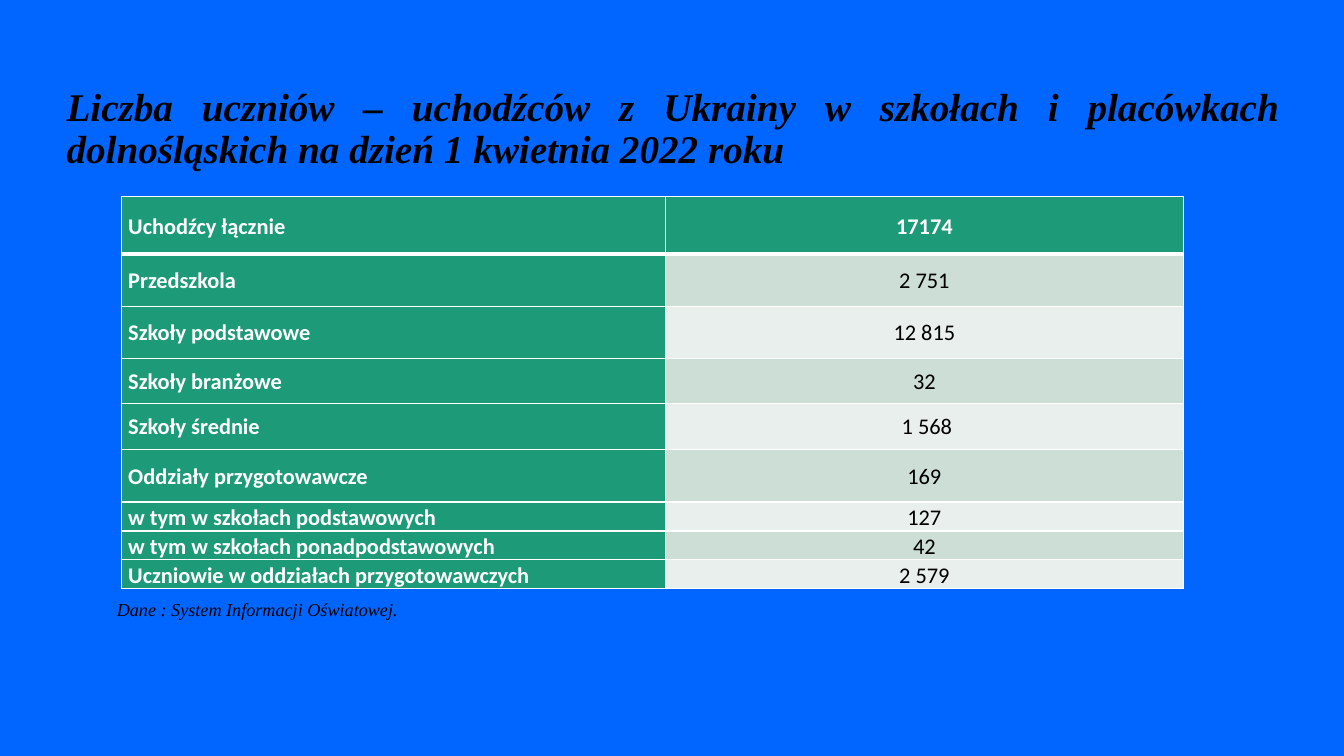
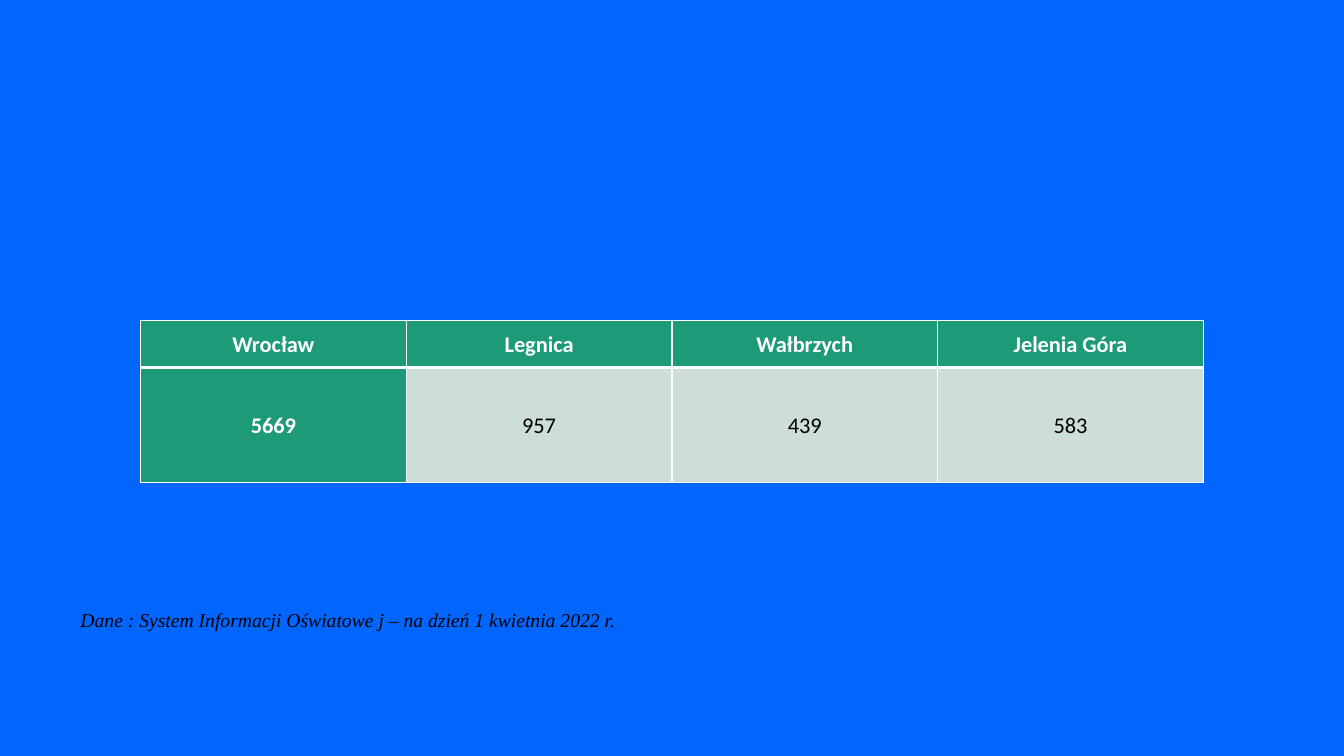
from lxml import etree
from pptx import Presentation
from pptx import oxml
from pptx import util as u
from pptx.dml.color import RGBColor
from pptx.enum import text
from pptx.oxml import ns

COLORS = {
    "background": "0066FF",
    "accent": "1D9A78",
    "band_dark": "CDDED6",
    "band_light": "E8EFEC",
    "light_text": "FFFFFF",
    "dark_text": "000000",
    "border": "FFFFFF",
}
TITLE_ONLY, BLANK = 5, 6

REFUGEES = [
    ("Uchodźcy łącznie", "17174"),
    ("Przedszkola", "2 751"),
    ("Szkoły podstawowe", "12 815"),
    ("Szkoły branżowe", "32"),
    ("Szkoły średnie", " 1 568"),
    ("Oddziały przygotowawcze", "169"),
    ("w tym w szkołach podstawowych", "127"),
    ("w tym w szkołach ponadpodstawowych", "42"),
    ("Uczniowie w oddziałach przygotowawczych", "2 579"),
]
CITIES = [
    ("Wrocław", "Legnica", "Wałbrzych", "Jelenia Góra"),
    ("5669", "957", "439", "583"),
]


def color(name):
    return RGBColor.from_string(COLORS[name])


class Deck:
    serif, sans = "Times New Roman", "Calibri"

    def __init__(self):
        self.prs = Presentation()
        self.prs.slide_width, self.prs.slide_height = u.Pt(960), u.Pt(540)
        fill = self.prs.slide_master.background.fill
        fill.solid()
        fill.fore_color.rgb = color("background")
        self.slide = None

    def new_slide(self, layout):
        self.slide = self.prs.slides.add_slide(self.prs.slide_layouts[layout])

    def set_text(self, paragraph, words, size, face, ink, bold=False, italic=False):
        paragraph.text = words
        font = paragraph.font
        font.name, font.size = face, u.Pt(size)
        font.bold, font.italic = bold, italic
        font.color.rgb = color(ink)

    def title(self, words, left, top, width, height):
        heading = self.slide.shapes.title
        heading.left, heading.top = u.Pt(left), u.Pt(top)
        heading.width, heading.height = u.Pt(width), u.Pt(height)
        frame = heading.text_frame
        frame.word_wrap = True
        frame.auto_size = text.MSO_AUTO_SIZE.NONE
        frame.vertical_anchor = text.MSO_ANCHOR.TOP
        paragraph = frame.paragraphs[0]
        self.set_text(paragraph, words, 28, self.serif, "dark_text",
                      bold=True, italic=True)
        paragraph.alignment = text.PP_ALIGN.JUSTIFY
        paragraph.line_spacing = 0.9

    def source_note(self, words, left, top, width, size):
        note = self.slide.shapes.add_textbox(
            u.Pt(left), u.Pt(top), u.Pt(width), u.Pt(size + 10))
        note.text_frame.word_wrap = True
        self.set_text(note.text_frame.paragraphs[0], words, size, self.serif,
                      "dark_text", italic=True)

    def table(self, rows, left, top, widths, heights, label_align):
        """Add a table with a header row, a label column and banded values."""
        grid = self.slide.shapes.add_table(
            len(rows), len(widths), u.Pt(left), u.Pt(top),
            u.Pt(sum(widths)), u.Pt(sum(heights))).table
        for column, width in zip(grid.columns, widths):
            column.width = u.Pt(width)
        for row, height in zip(grid.rows, heights):
            row.height = u.Pt(height)
        for r, values in enumerate(rows):
            for c, words in enumerate(values):
                align = text.PP_ALIGN.CENTER if c else label_align
                self.cell(grid.cell(r, c), words, r, c, align)

    def cell(self, cell, words, row, column, align):
        strong = row == 0 or column == 0
        band = "band_dark" if row % 2 else "band_light"
        self.borders(cell, top=3 if row == 1 else 1, bottom=3 if row == 0 else 1)
        cell.fill.solid()
        cell.fill.fore_color.rgb = color("accent" if strong else band)
        cell.margin_left = cell.margin_right = u.Pt(5)
        cell.margin_top = cell.margin_bottom = 0
        cell.vertical_anchor = text.MSO_ANCHOR.MIDDLE
        paragraph = cell.text_frame.paragraphs[0]
        self.set_text(paragraph, words, 16, self.sans,
                      "light_text" if strong else "dark_text", bold=strong)
        paragraph.alignment = align
        paragraph.line_spacing = 1.07

    def borders(self, cell, top, bottom):
        properties = cell._tc.get_or_add_tcPr()
        for side, width in (("L", 1), ("R", 1), ("T", top), ("B", bottom)):
            line = oxml.parse_xml(
                f'<a:ln{side} {ns.nsdecls("a")} w="{u.Pt(width)}"/>')
            fill = etree.SubElement(line, ns.qn("a:solidFill"))
            etree.SubElement(fill, ns.qn("a:srgbClr"), val=COLORS["border"])
            properties.append(line)


def main():
    deck = Deck()

    deck.new_slide(TITLE_ONLY)
    deck.title("Liczba uczniów – uchodźców z Ukrainy w szkołach i placówkach "
               "dolnośląskich na dzień 1 kwietnia 2022 roku", 40.3, 59, 880.6, 76)
    deck.source_note("Dane : System Informacji Oświatowej.", 76.3, 424, 854, 13)
    deck.table(REFUGEES, 86.6, 140.6, [388.7, 370],
               [41, 37.2, 37.2, 32, 33, 37.6] + [20.7] * 3, text.PP_ALIGN.LEFT)

    deck.new_slide(BLANK)
    deck.source_note("Dane : System Informacji Oświatowe j – na dzień 1 kwietnia 2022 r.",
                     50.4, 430.6, 898.6, 14)
    deck.table(CITIES, 100.4, 229.2, [189.8] * 4, [33.2, 82.4], text.PP_ALIGN.CENTER)

    deck.prs.save("out.pptx")


if __name__ == "__main__":
    main()
